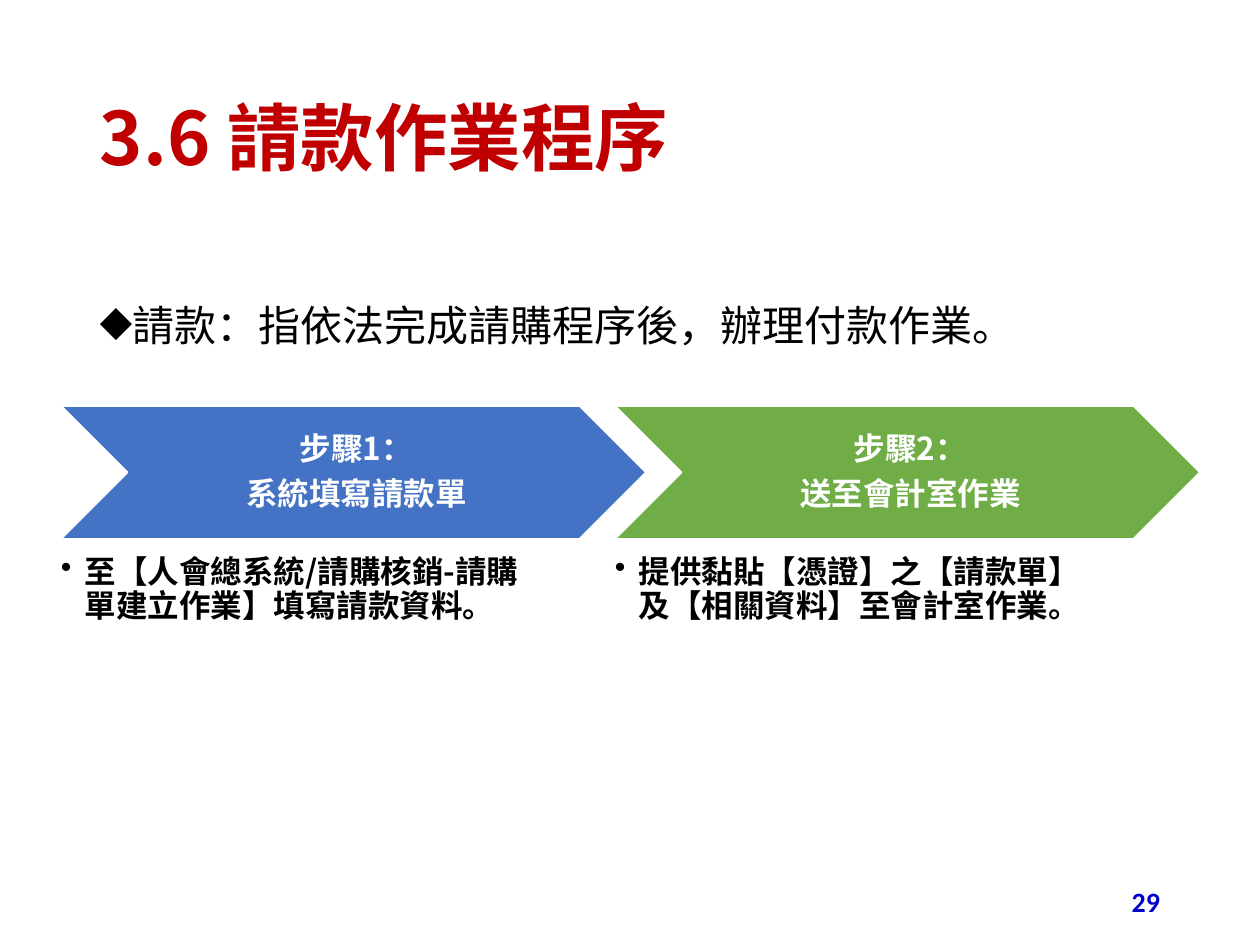
from lxml.etree import SubElement
from pptx import Presentation
from pptx.dml.color import RGBColor
from pptx.enum.shapes import MSO_SHAPE
from pptx.enum.text import MSO_ANCHOR, PP_ALIGN
from pptx.oxml.ns import qn
from pptx.util import Emu, Pt

RED = RGBColor(0xC0, 0x00, 0x00)
BLACK = RGBColor(0x00, 0x00, 0x00)
WHITE = RGBColor(0xFF, 0xFF, 0xFF)
NAVY = RGBColor(0x00, 0x00, 0xCC)
BLUE = RGBColor(0x44, 0x72, 0xC4)
GREEN = RGBColor(0x70, 0xAD, 0x47)

CJK = "Noto Sans CJK SC"
LATIN = "Calibri"

TITLE = "3.6 請款作業程序"
DEFINITION = "請款：指依法完成請購程序後，辦理付款作業。"
PAGE_NUMBER = "29"
STEPS = [
    (BLUE, ["步驟1：", "系統填寫請款單"],
     "至【人會總系統/請購核銷-請購單建立作業】填寫請款資料。"),
    (GREEN, ["步驟2：", "送至會計室作業"],
     "提供黏貼【憑證】之【請款單】及【相關資料】至會計室作業。"),
]

STEP_LEFT, STEP_PITCH = 61, 554
CHEVRON_TOP, CHEVRON_WIDTH, CHEVRON_HEIGHT = 406, 585, 133
DETAIL_TOP, DETAIL_WIDTH, DETAIL_HEIGHT = 556, 467, 101


def px(length):
    return Emu(length * 914400 // 126)


def add_text(slide, box, lines, size, color, font=CJK, bold=True,
             anchor=MSO_ANCHOR.TOP, align=PP_ALIGN.LEFT, spacing=0.9,
             after=0, insets=(13, 6, 13, 6), bullet=None, indent=0):
    frame = slide.shapes.add_textbox(*map(px, box)).text_frame
    frame.word_wrap = True
    frame.vertical_anchor = anchor
    (frame.margin_left, frame.margin_top,
     frame.margin_right, frame.margin_bottom) = map(px, insets)
    for index, line in enumerate(lines):
        paragraph = frame.add_paragraph() if index else frame.paragraphs[0]
        if bullet:
            properties = paragraph._p.get_or_add_pPr()
            properties.set("marL", str(px(indent)))
            properties.set("indent", str(-px(indent)))
            SubElement(properties, qn("a:buChar"), char=bullet)
        paragraph.alignment = align
        paragraph.line_spacing = spacing
        paragraph.space_after = Pt(after)
        run = paragraph.add_run()
        run.text = line
        run.font.size = Pt(size)
        run.font.bold = bold
        run.font.color.rgb = color
        run.font.name = font
        SubElement(run._r.get_or_add_rPr(), qn("a:ea"), typeface=font)


def add_step(slide, left, fill, heading, detail):
    chevron = slide.shapes.add_shape(
        MSO_SHAPE.CHEVRON,
        *map(px, (left, CHEVRON_TOP, CHEVRON_WIDTH, CHEVRON_HEIGHT)))
    chevron.shadow.inherit = False
    chevron.fill.solid()
    chevron.fill.fore_color.rgb = fill
    chevron.line.color.rgb = WHITE
    chevron.line.width = Pt(1)
    notch = CHEVRON_HEIGHT // 2
    add_text(slide,
             (left + notch, CHEVRON_TOP, CHEVRON_WIDTH - 2 * notch, CHEVRON_HEIGHT),
             heading, 18, WHITE, anchor=MSO_ANCHOR.MIDDLE, align=PP_ALIGN.CENTER,
             after=6.3, insets=(10, 4, 4, 4))
    add_text(slide, (left, DETAIL_TOP, DETAIL_WIDTH, DETAIL_HEIGHT), [detail],
             18, BLACK, after=2.7, insets=(0, 0, 0, 0), bullet="•", indent=24)


def main():
    presentation = Presentation()
    presentation.slide_width, presentation.slide_height = px(1260), px(945)
    slide = presentation.slides.add_slide(presentation.slide_layouts[6])
    add_text(slide, (87, 50, 1086, 183), [TITLE], 42, RED, anchor=MSO_ANCHOR.MIDDLE)
    add_text(slide, (87, 299, 1120, 59), [DEFINITION], 24, BLACK, bold=False,
             bullet="◆", indent=32)
    add_text(slide, (890, 876, 283, 50), [PAGE_NUMBER], 16, NAVY, font=LATIN,
             anchor=MSO_ANCHOR.MIDDLE, align=PP_ALIGN.RIGHT, spacing=1.0)
    for index, step in enumerate(STEPS):
        add_step(slide, STEP_LEFT + index * STEP_PITCH, *step)
    presentation.save("out.pptx")


if __name__ == "__main__":
    main()
